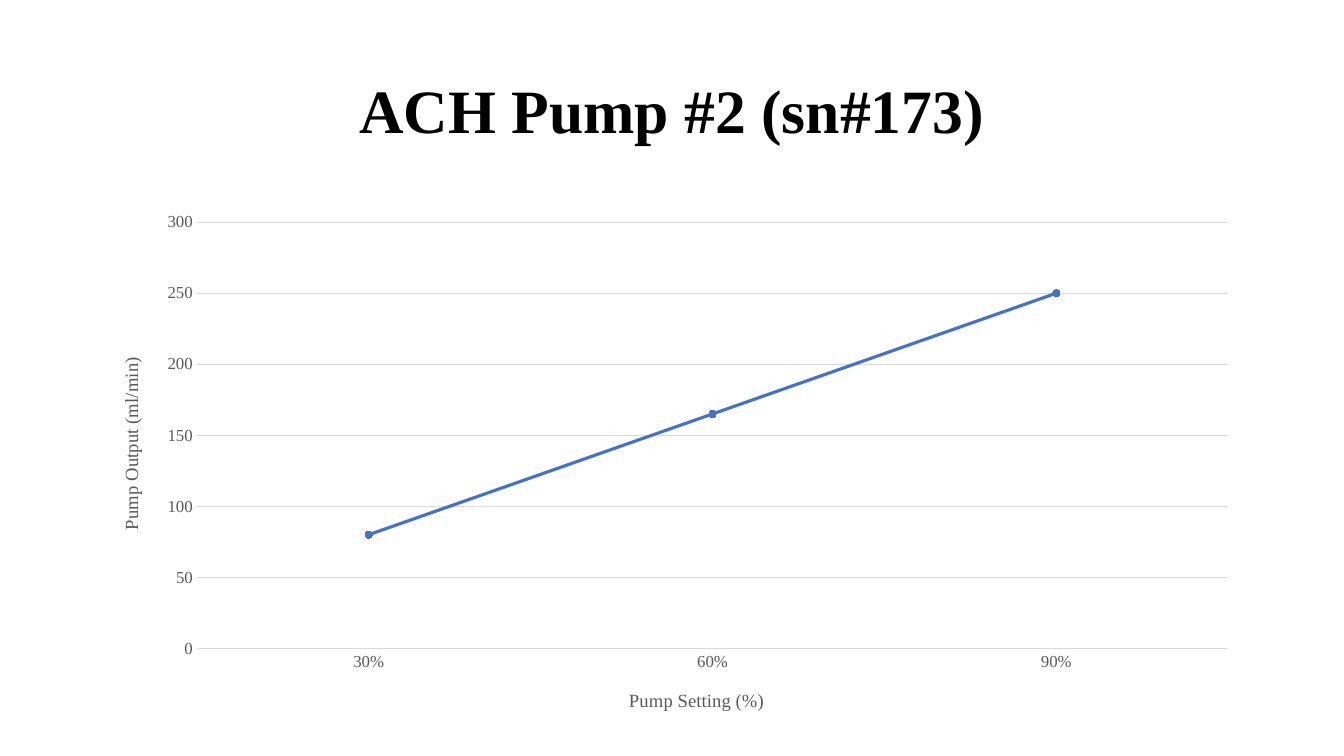
"""Build a slide with a line chart of pump output against pump setting."""
from lxml.etree import SubElement
from pptx import Presentation
from pptx.chart.data import CategoryChartData
from pptx.dml.color import RGBColor
from pptx.enum.chart import XL_CHART_TYPE, XL_MARKER_STYLE, XL_TICK_MARK
from pptx.enum.text import MSO_ANCHOR, PP_ALIGN
from pptx.oxml.ns import qn
from pptx.util import Cm, Pt

FONT = "Times New Roman"
GREY, RULE, BLUE = "595959", "D9D9D9", "4472C4"


def style_font(font, size, color, bold=False):
    font.name = FONT
    font.size = Pt(size)
    font.bold = bold
    font.color.rgb = RGBColor.from_string(color)


def place(element, **settings):
    for old in element.findall(qn("c:layout")):
        element.remove(old)
    layout = SubElement(element, qn("c:layout"))
    manual = SubElement(layout, qn("c:manualLayout"))
    for name, value in settings.items():
        SubElement(manual, qn(f"c:{name}")).set("val", str(value))
    return layout


deck = Presentation()
deck.slide_width, deck.slide_height = Cm(33.87), Cm(19.05)
page = deck.slides.add_slide(deck.slide_layouts[6])

box = page.shapes.add_textbox(Cm(2.33), Cm(1.01), Cm(29.21), Cm(3.68))
box.text_frame.word_wrap = True
box.text_frame.vertical_anchor = MSO_ANCHOR.MIDDLE
para = box.text_frame.paragraphs[0]
para.alignment = PP_ALIGN.CENTER
para.line_spacing = 0.9
span = para.add_run()
span.text = "ACH Pump #2 (sn#173)"
style_font(span.font, 44, "000000", True)

data = CategoryChartData()
data.categories = [0.3, 0.6, 0.9]
data.categories.number_format = "0%"
data.add_series("Series 1", [80, 165, 250])
chart = page.shapes.add_chart(
    XL_CHART_TYPE.LINE_MARKERS_STACKED, Cm(2.33), Cm(5.07), Cm(29.21), Cm(13.26), data
).chart
chart.has_legend = False
chart.has_title = False
style_font(chart.font, 12, GREY)

setting_axis, output_axis = chart.category_axis, chart.value_axis
for axis, title, number_format, left, top in (
    (setting_axis, "Pump Setting (%)", "0%", 0.46, 0.92),
    (output_axis, "Pump Output (ml/min)", "General", 0.02, 0.29),
):
    axis.major_tick_mark = axis.minor_tick_mark = XL_TICK_MARK.NONE
    style_font(axis.tick_labels.font, 12, GREY)
    axis.tick_labels.number_format = number_format
    axis.tick_labels.number_format_is_linked = False
    span = axis.axis_title.text_frame.paragraphs[0].add_run()
    span.text = title
    style_font(span.font, 13.3, GREY)
    element = axis.axis_title._element
    layout = place(element, xMode="edge", yMode="edge", x=left, y=top)
    element.find(qn("c:tx")).addnext(layout)

setting_axis.format.line.color.rgb = RGBColor.from_string(RULE)
setting_axis.format.line.width = Pt(0.75)
output_axis.format.line.fill.background()
output_axis.minimum_scale, output_axis.maximum_scale = 0, 300
output_axis.major_unit = 50
output_axis.has_major_gridlines = True
gridline = output_axis.major_gridlines.format.line
gridline.color.rgb = RGBColor.from_string(RULE)
gridline.width = Pt(0.75)

plot = chart.plots[0]
plot.vary_by_categories = False
output = plot.series[0]
output.smooth = False
output.format.line.color.rgb = RGBColor.from_string(BLUE)
output.format.line.width = Pt(2.25)
output.marker.style = XL_MARKER_STYLE.CIRCLE
output.marker.size = 5
output.marker.format.fill.solid()
output.marker.format.fill.fore_color.rgb = RGBColor.from_string(BLUE)
output.marker.format.line.color.rgb = RGBColor.from_string(BLUE)

plot_area = chart._chartSpace.chart.plotArea
layout = place(plot_area, layoutTarget="inner", xMode="edge", yMode="edge",
               x=0.09, y=0.04, w=0.89, h=0.81)
plot_area.insert(0, layout)

deck.save("out.pptx")
